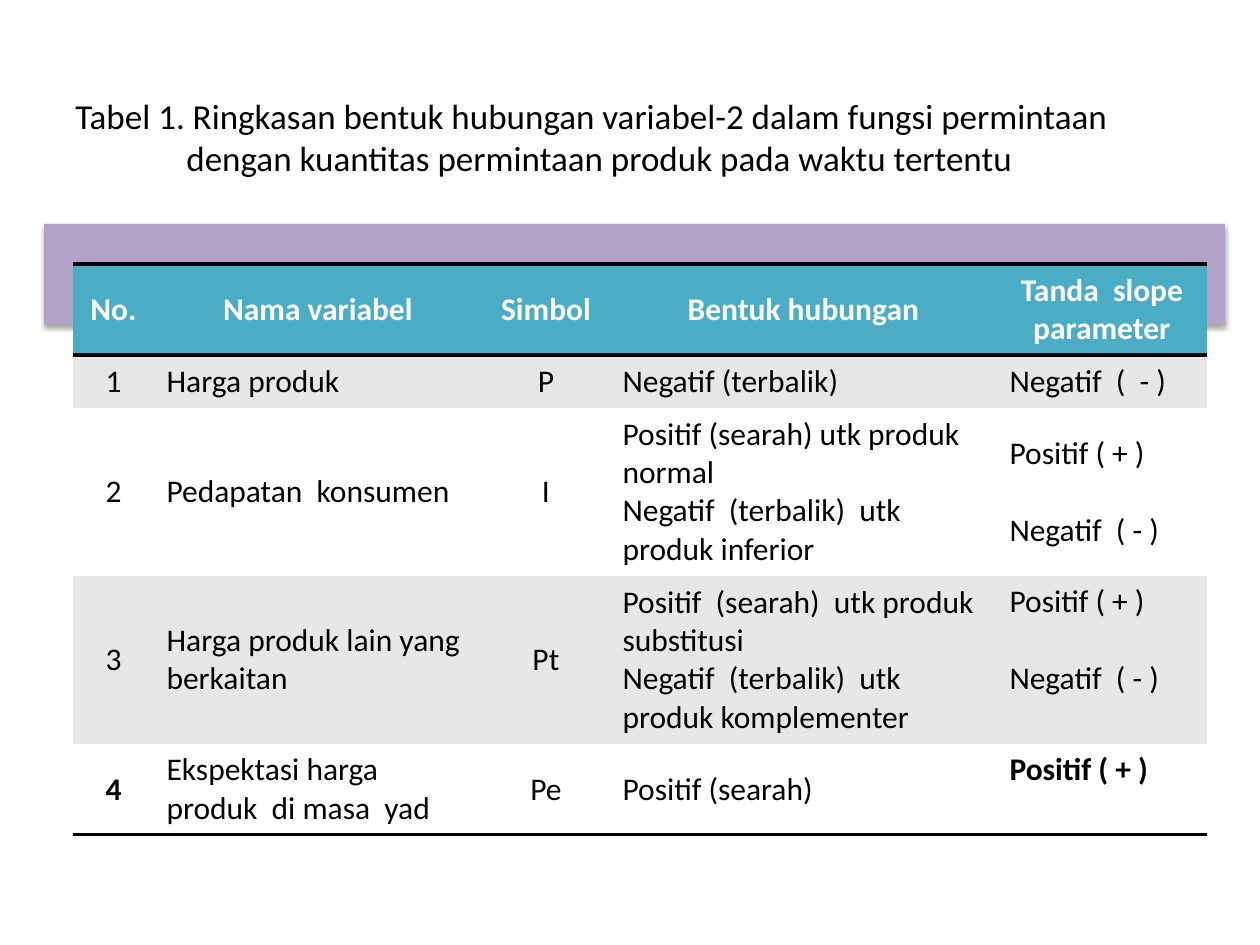
"""Builds a slide with a table of variables in the demand function."""
from dataclasses import dataclass

from lxml.etree import SubElement
from pptx import Presentation
from pptx.dml.color import RGBColor
from pptx.enum.shapes import MSO_SHAPE
from pptx.enum.text import MSO_ANCHOR, PP_ALIGN
from pptx.oxml import parse_xml
from pptx.oxml.ns import nsdecls, qn
from pptx.util import Pt

TITLE = ("Tabel 1. Ringkasan bentuk hubungan variabel-2 dalam fungsi permintaan "
         "dengan kuantitas permintaan produk pada waktu tertentu")
SIGNS = ["Positif ( + )", "Negatif  ( - )"]
ROWS = [
    ["No.", "Nama variabel", "Simbol", "Bentuk hubungan", "Tanda  slope parameter"],
    ["1", "Harga produk", "P", "Negatif (terbalik)", "Negatif  (  - )"],
    ["2", "Pedapatan  konsumen", "I",
     ["Positif (searah) utk produk normal", "Negatif  (terbalik)  utk produk inferior"],
     SIGNS],
    ["3", "Harga produk lain yang  berkaitan", "Pt",
     ["Positif  (searah)  utk produk  substitusi",
      "Negatif  (terbalik)  utk produk komplementer"],
     SIGNS],
    ["4", "Ekspektasi harga  produk  di masa  yad", "Pe", "Positif (searah)", SIGNS[:1]],
]
COLUMN_WIDTHS = [81, 328, 128, 387, 210]
ROW_HEIGHTS = [91, 53, 168, 168, 91]
CENTRED_COLUMNS = {0, 2}
SIGN_COLUMN = 4
TOP_SIGN_ROWS = {3, 4}
BOLD_CELLS = {(4, 0), (4, 4)}
PLAIN_TABLE_STYLE = "{2D5ABB26-0587-4C30-8999-92F81FD0307C}"


@dataclass(frozen=True)
class Theme:
    font: str = "Calibri"
    title_size: int = 20
    table_size: int = 18
    line_gap: int = 22
    rule: int = 2
    ink: str = "000000"
    paper: str = "FFFFFF"
    stripe: str = "E7E7E7"
    header: str = "4BACC6"
    band: str = "B3A2C7"


THEME = Theme()


def px(*lengths):
    return [round(length * 914400 / 126) for length in lengths]


def set_font(para, size, color, bold=False):
    font = para.font
    font.name, font.size, font.bold = THEME.font, Pt(size), bold
    font.color.rgb = RGBColor.from_string(color)


def add_band(page):
    band = page.shapes.add_shape(MSO_SHAPE.RECTANGLE, *px(44, 224, 1181, 100))
    band.fill.solid()
    band.fill.fore_color.rgb = RGBColor.from_string(THEME.band)
    band.line.fill.background()
    band.shadow.inherit = False
    effects = band._element.spPr.find(qn("a:effectLst"))
    shadow = SubElement(effects, qn("a:outerShdw"), blurRad=str(Pt(3.1)),
                        dist=str(Pt(1.8)), dir="5400000", rotWithShape="0")
    color = SubElement(shadow, qn("a:srgbClr"), val=THEME.ink)
    SubElement(color, qn("a:alpha"), val="35000")


def add_title(page):
    box = page.shapes.add_textbox(*px(63, 76, 1134, 120))
    frame = box.text_frame
    frame.word_wrap = True
    frame.vertical_anchor = MSO_ANCHOR.MIDDLE
    para = frame.paragraphs[0]
    para.text = TITLE
    indent, = px(111)
    properties = para._p.get_or_add_pPr()
    properties.set("marL", str(indent))
    properties.set("indent", str(-indent))
    set_font(para, THEME.title_size, THEME.ink)


def add_rules(cell, sides):
    properties = cell._tc.get_or_add_tcPr()
    for position, side in enumerate(sides):
        properties.insert(position, parse_xml(
            f'<a:ln{side} {nsdecls("a")} w="{Pt(THEME.rule)}"><a:solidFill>'
            f'<a:srgbClr val="{THEME.ink}"/></a:solidFill></a:ln{side}>'))


def fill_cell(cell, content, row, column):
    header = row == 0
    lines = [content] if isinstance(content, str) else content
    background = THEME.header if header else THEME.stripe if row % 2 else THEME.paper
    cell.fill.solid()
    cell.fill.fore_color.rgb = RGBColor.from_string(background)
    at_top = column == SIGN_COLUMN and row in TOP_SIGN_ROWS
    cell.vertical_anchor = MSO_ANCHOR.TOP if at_top else MSO_ANCHOR.MIDDLE
    frame = cell.text_frame
    for number, line in enumerate(lines):
        para = frame.add_paragraph() if number else frame.paragraphs[0]
        para.text = line
        centred = header or column in CENTRED_COLUMNS
        para.alignment = PP_ALIGN.CENTER if centred else PP_ALIGN.LEFT
        if number and column == SIGN_COLUMN:
            para.space_before = Pt(THEME.line_gap)
        set_font(para, THEME.table_size, THEME.paper if header else THEME.ink,
                 header or (row, column) in BOLD_CELLS)
    if header:
        add_rules(cell, "TB")
    elif row == len(ROWS) - 1:
        add_rules(cell, "B")


def add_variables_table(page):
    frame = page.shapes.add_table(
        len(ROWS), len(COLUMN_WIDTHS),
        *px(73, 264, sum(COLUMN_WIDTHS), sum(ROW_HEIGHTS)))
    table = frame.table
    table.horz_banding = False
    table._tbl.tblPr.find(qn("a:tableStyleId")).text = PLAIN_TABLE_STYLE
    for column, width in zip(table.columns, px(*COLUMN_WIDTHS)):
        column.width = width
    for row, height in zip(table.rows, px(*ROW_HEIGHTS)):
        row.height = height
    for row, contents in enumerate(ROWS):
        for column, content in enumerate(contents):
            fill_cell(table.cell(row, column), content, row, column)


def main():
    deck = Presentation()
    deck.slide_width, deck.slide_height = px(1260, 945)
    page = deck.slides.add_slide(deck.slide_layouts[6])
    add_band(page)
    add_title(page)
    add_variables_table(page)
    deck.save("out.pptx")


if __name__ == "__main__":
    main()
